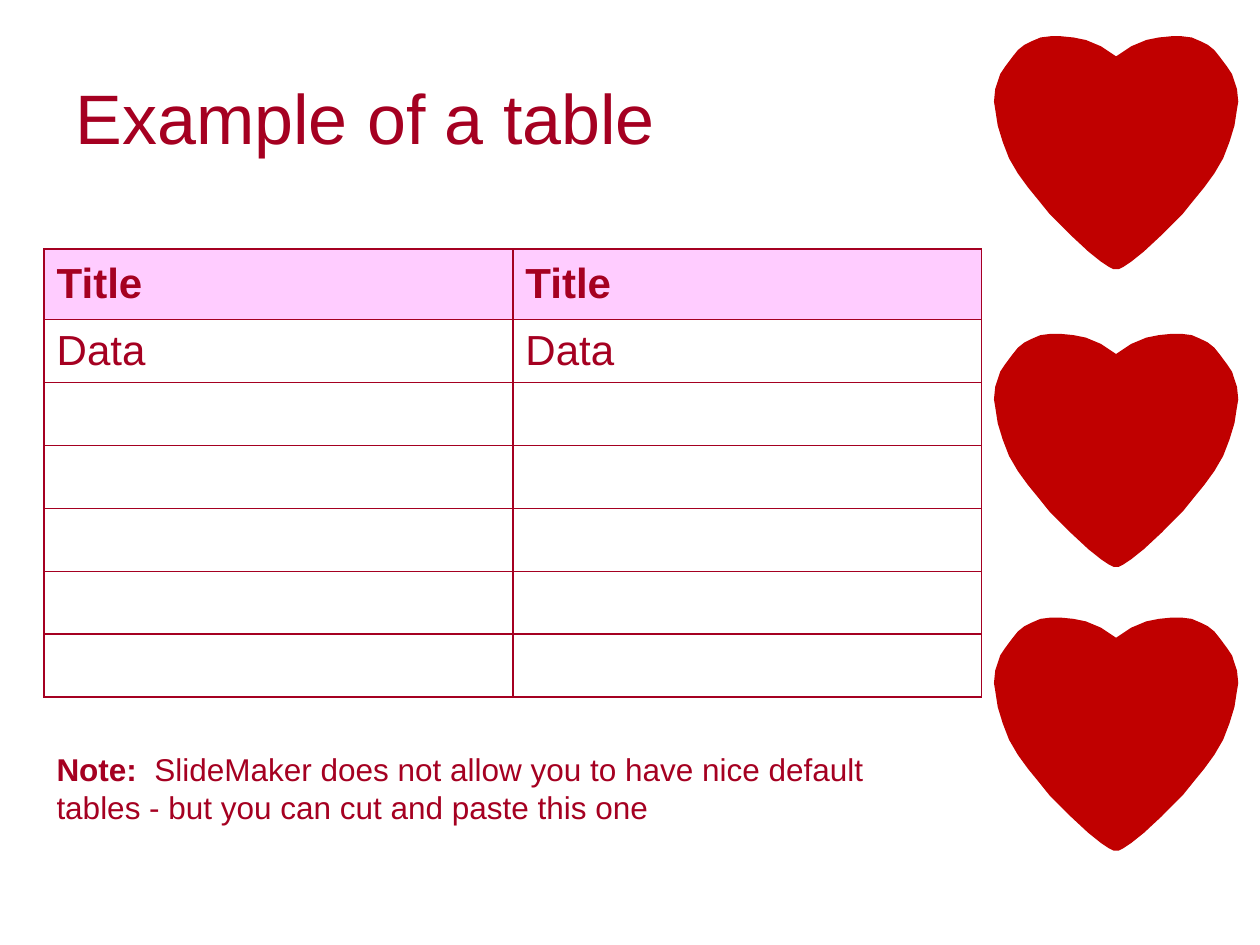
from dataclasses import dataclass

from lxml import etree
from pptx import Presentation
from pptx import util as u
from pptx.dml.color import RGBColor
from pptx.enum import text
from pptx.oxml import ns


@dataclass(frozen=True)
class Theme:
    font: str = "Arial"
    ink: str = "A50021"
    heart: str = "C00000"
    header: str = "FFCCFF"
    title_size: int = 40
    table_size: int = 24
    note_size: int = 18
    border: int = 1


@dataclass(frozen=True)
class Box:
    left: float
    top: float
    width: float
    height: float

    def lengths(self):
        return [u.Cm(v) for v in (self.left, self.top, self.width, self.height)]


THEME = Theme()
HEART_WIDTH = 193
HALF_HEART = [
    (0, 16), (12, 8), (24, 3), (34, 1), (44, 0), (52, 0), (60, 1), (67, 4),
    (73, 7), (78, 11), (82, 16), (88, 24), (92, 30), (94, 36), (96, 42),
    (97, 52), (96, 58), (94, 71), (90, 84), (85, 97), (78, 109), (70, 120),
    (61, 131), (53, 141), (36, 158), (22, 171), (12, 179), (6, 183),
    (2, 185), (0, 185),
]


def style_runs(p, size, bold=False):
    for r in p.runs:
        r.font.name = THEME.font
        r.font.size = u.Pt(size)
        r.font.bold = bold
        r.font.color.rgb = RGBColor.from_string(THEME.ink)


def add_heart(s, box):
    mirrored = [(-x, y) for x, y in reversed(HALF_HEART[1:-1])]
    outline = HALF_HEART + mirrored
    builder = s.shapes.build_freeform(*outline[0], scale=u.Cm(box.width) / HEART_WIDTH)
    builder.add_line_segments(outline[1:], close=True)
    sp = builder.convert_to_shape(u.Cm(box.left + box.width / 2), u.Cm(box.top))
    sp.shadow.inherit = False
    sp.fill.solid()
    sp.fill.fore_color.rgb = RGBColor.from_string(THEME.heart)
    sp.line.fill.background()


def add_hearts(s, box, tops):
    for top in tops:
        add_heart(s, Box(box.left, box.top + top, box.width, box.height))


def add_title(s, box, title):
    sp = s.shapes.title
    sp.left, sp.top, sp.width, sp.height = box.lengths()
    tf = sp.text_frame
    tf.text = title
    tf.vertical_anchor = text.MSO_ANCHOR.MIDDLE
    p = tf.paragraphs[0]
    p.alignment = text.PP_ALIGN.LEFT
    style_runs(p, THEME.title_size)


def add_borders(cell):
    props = cell._tc.get_or_add_tcPr()
    for index, side in enumerate(("lnL", "lnR", "lnT", "lnB")):
        line = etree.Element(ns.qn(f"a:{side}"), w=str(u.Pt(THEME.border)))
        fill = etree.SubElement(line, ns.qn("a:solidFill"))
        etree.SubElement(fill, ns.qn("a:srgbClr"), val=THEME.ink)
        props.insert(index, line)


def add_data_table(s, box, rows, header_height):
    table = s.shapes.add_table(len(rows), len(rows[0]), *box.lengths()).table
    table.first_row = table.horz_banding = False
    for column in table.columns:
        column.width = u.Cm(box.width / len(rows[0]))
    row_height = (box.height - header_height) / (len(rows) - 1)
    for i, values in enumerate(rows):
        is_header = i == 0
        table.rows[i].height = u.Cm(header_height if is_header else row_height)
        for cell, value in zip(table.rows[i].cells, values):
            if is_header:
                cell.fill.solid()
                cell.fill.fore_color.rgb = RGBColor.from_string(THEME.header)
            else:
                cell.fill.background()
            add_borders(cell)
            cell.vertical_anchor = text.MSO_ANCHOR.MIDDLE
            if value:
                cell.text_frame.text = value
                style_runs(cell.text_frame.paragraphs[0], THEME.table_size, is_header)


def add_note(s, box, label, note):
    tf = s.shapes.add_textbox(*box.lengths()).text_frame
    tf.word_wrap = True
    tf.auto_size = text.MSO_AUTO_SIZE.SHAPE_TO_FIT_TEXT
    p = tf.paragraphs[0]
    p.text = label
    p.add_run().text = note
    style_runs(p, THEME.note_size)
    p.runs[0].font.bold = True


def main():
    prs = Presentation()
    prs.slide_width, prs.slide_height = u.Cm(25.4), u.Cm(19.05)
    s = prs.slides.add_slide(prs.slide_layouts[5])
    add_hearts(s, Box(20.05, 0.73, 4.9, 4.72), (0, 6, 11.72))
    add_title(s, Box(1.27, 0.76, 22.86, 3.18), "Example of a table")
    rows = [("Title", "Title"), ("Data", "Data")] + [("", "")] * 5
    add_data_table(s, Box(0.89, 5.02, 18.9, 9.04), rows, header_height=1.42)
    add_note(
        s,
        Box(0.89, 14.99, 17.83, 1.8),
        "Note:  ",
        "SlideMaker does not allow you to have nice default tables"
        " - but you can cut and paste this one",
    )
    prs.save("out.pptx")


if __name__ == "__main__":
    main()
